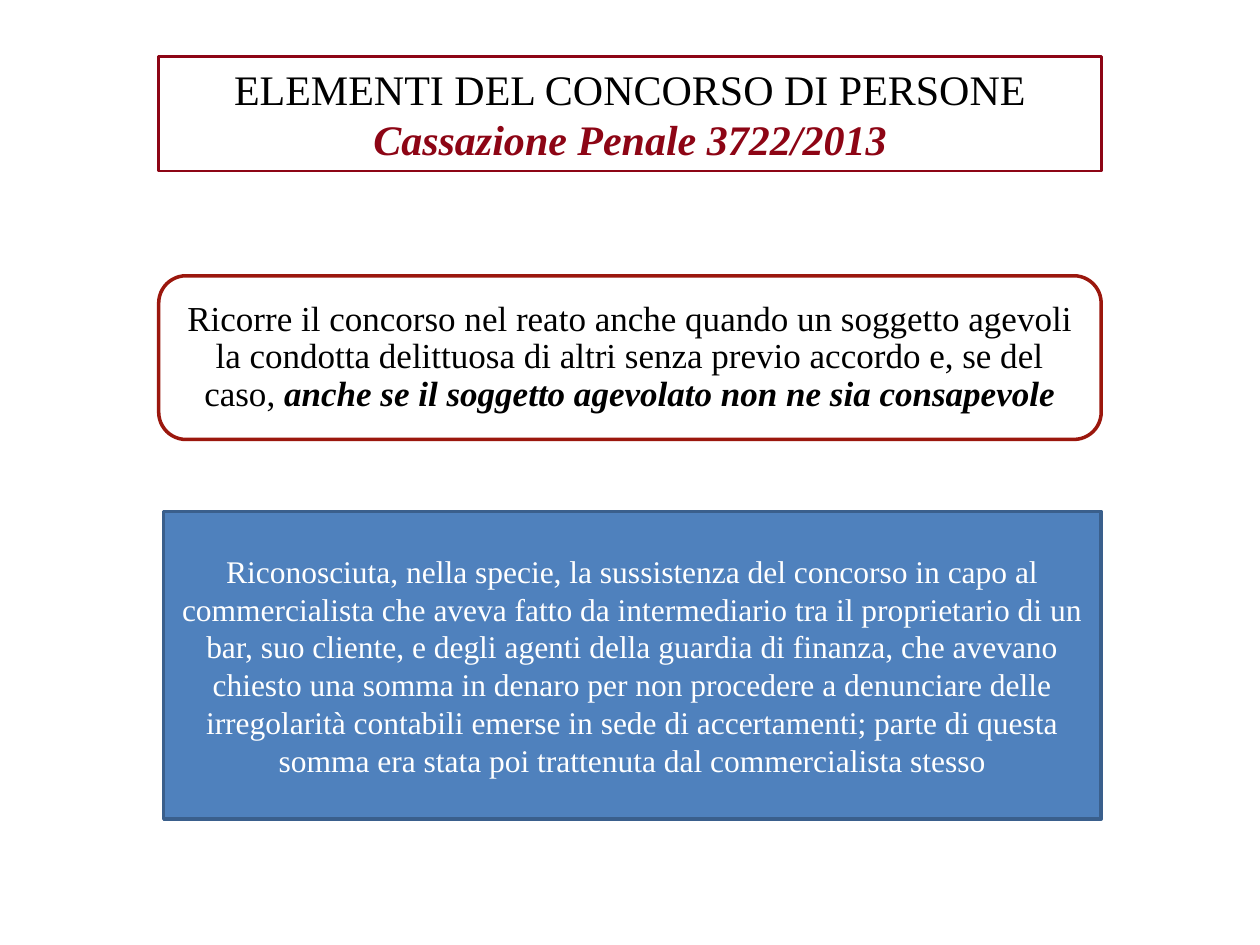
import pptx
import pptx.util
import pptx.dml.color
import pptx.enum.shapes
import pptx.enum.text

Cm, Pt = pptx.util.Cm, pptx.util.Pt
SHAPE = pptx.enum.shapes.MSO_SHAPE
ANCHOR = pptx.enum.text.MSO_ANCHOR

COLOURS = {
    "black": "000000", "white": "FFFFFF", "crimson": "8D0515",
    "brick": "9B170D", "blue": "4F81BD", "navy": "3A5F8C",
}
EMPHASIS = {"bold": True, "italic": True}

# Content: each paragraph is a list of (text, colour, font attributes)
TITLE = {
    "at": (3.2, 1.14, 19, 2.31), "fill": None, "line": ("crimson", 1.5),
    "size": 24, "anchor": ANCHOR.TOP, "inset": 0.25, "spacing": 1.0,
    "paragraphs": [
        [("ELEMENTI DEL CONCORSO DI PERSONE", "black", {})],
        [("Cassazione Penale 3722/2013", "crimson", EMPHASIS)],
    ],
}
BOXES = [
    {
        "kind": SHAPE.ROUNDED_RECTANGLE, "at": (3.2, 5.56, 19, 3.3),
        "fill": "white", "line": ("brick", 2),
        "size": 20, "anchor": ANCHOR.MIDDLE, "inset": 0.2, "spacing": 0.9,
        "paragraphs": [[
            ("Ricorre il concorso nel reato anche quando un soggetto agevoli la "
             "condotta delittuosa di altri senza previo accordo e, se del caso, ",
             "black", {}),
            ("anche se il soggetto agevolato non ne sia consapevole",
             "black", EMPHASIS),
        ]],
    },
    {
        "kind": SHAPE.RECTANGLE, "at": (3.3, 10.31, 18.9, 6.2),
        "fill": "blue", "line": ("navy", 2),
        "size": 18, "anchor": ANCHOR.MIDDLE, "inset": 0.25, "spacing": 1.0,
        "paragraphs": [[
            ("Riconosciuta, nella specie, la sussistenza del concorso in capo al "
             "commercialista che aveva fatto da intermediario tra il proprietario "
             "di un bar, suo cliente, e degli agenti della guardia di finanza, che "
             "avevano chiesto una somma in denaro per non procedere a denunciare "
             "delle irregolarità contabili emerse in sede di accertamenti; parte "
             "di questa somma era stata poi trattenuta dal commercialista stesso",
             "white", {}),
        ]],
    },
]


def colour(name):
    return pptx.dml.color.RGBColor.from_string(COLOURS[name])


def set_all(target, values):
    for name, value in values.items():
        setattr(target, name, value)


def format_box(box, content):
    # Outline and fill
    if content["fill"]:
        box.fill.solid()
        box.fill.fore_color.rgb = colour(content["fill"])
    else:
        box.fill.background()
    line_colour, line_width = content["line"]
    box.line.color.rgb = colour(line_colour)
    box.line.width = Pt(line_width)

    # Text frame
    frame = box.text_frame
    inset = Cm(content["inset"])
    set_all(frame, {
        "word_wrap": True, "auto_size": pptx.enum.text.MSO_AUTO_SIZE.NONE,
        "vertical_anchor": content["anchor"],
        "margin_left": inset, "margin_right": inset,
        "margin_top": Cm(0.13), "margin_bottom": Cm(0.13),
    })

    # Paragraphs and spans
    for index, spans in enumerate(content["paragraphs"]):
        para = frame.add_paragraph() if index else frame.paragraphs[0]
        set_all(para, {
            "alignment": pptx.enum.text.PP_ALIGN.CENTER,
            "line_spacing": content["spacing"],
            "space_before": Pt(0), "space_after": Pt(0),
        })
        for text, text_colour, extras in spans:
            span = para.add_run()
            span.text = text
            set_all(span.font, {"name": "Times New Roman",
                                "size": Pt(content["size"]), **extras})
            span.font.color.rgb = colour(text_colour)


def main():
    deck = pptx.Presentation()
    set_all(deck, {"slide_width": Cm(25.4), "slide_height": Cm(19.05)})
    page = deck.slides.add_slide(deck.slide_layouts[5])

    # Framed title
    title = page.shapes.title
    places = map(Cm, TITLE["at"])
    set_all(title, dict(zip(("left", "top", "width", "height"), places)))
    format_box(title, TITLE)

    # Principle and case boxes
    for content in BOXES:
        box = page.shapes.add_shape(content["kind"], *map(Cm, content["at"]))
        box.shadow.inherit = False
        format_box(box, content)

    deck.save("out.pptx")


if __name__ == "__main__":
    main()
